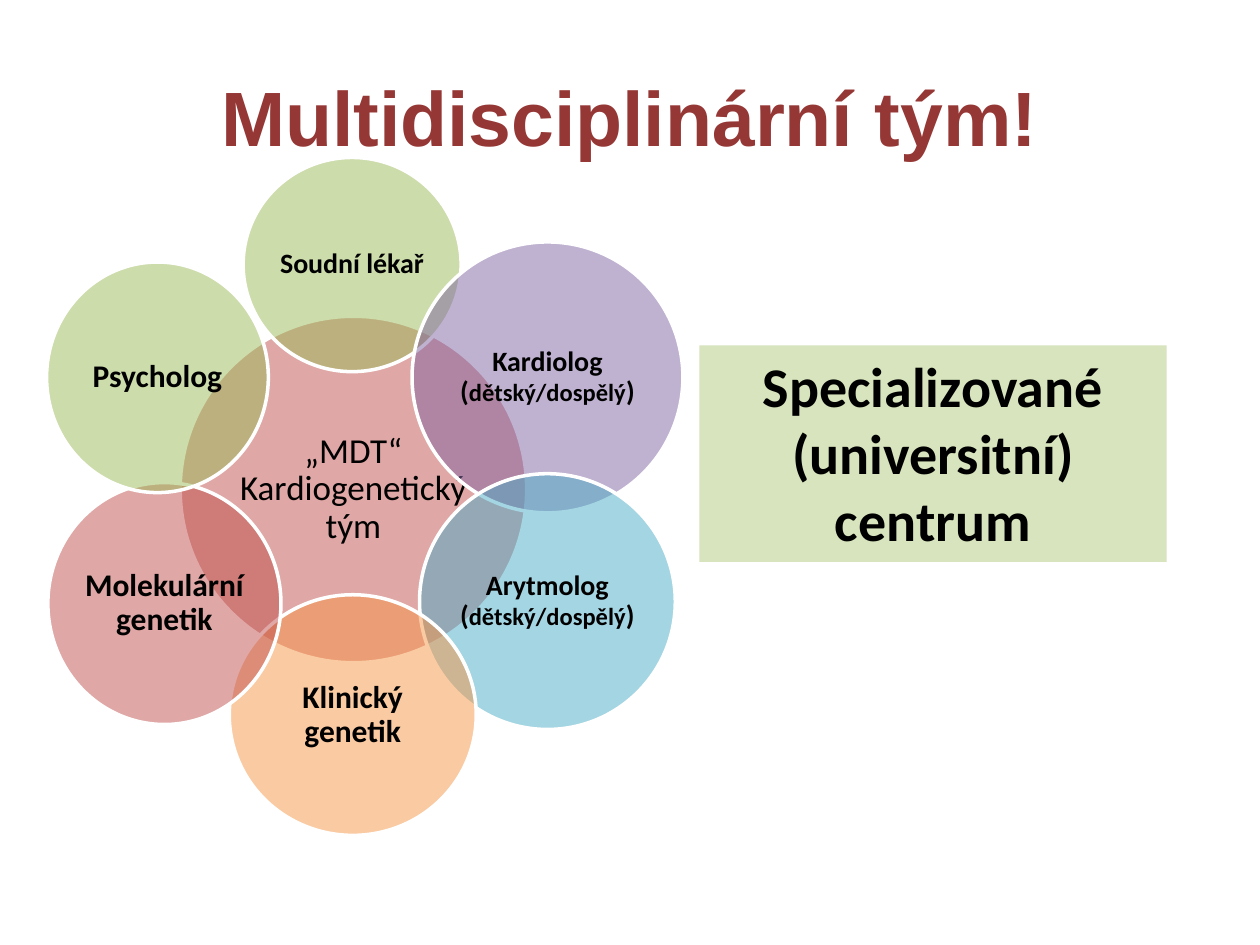
from lxml import etree
from pptx import Presentation
from pptx.dml.color import RGBColor
from pptx.enum.shapes import MSO_SHAPE
from pptx.enum.text import MSO_ANCHOR, PP_ALIGN
from pptx.oxml.ns import qn
from pptx.util import Inches, Pt

OVAL = MSO_SHAPE.OVAL
RECTANGLE = MSO_SHAPE.RECTANGLE
CENTER = PP_ALIGN.CENTER
MIDDLE = MSO_ANCHOR.MIDDLE
TOP = MSO_ANCHOR.TOP

TITLE_ONLY = 5
COLORS = {
    "title": "953735",
    "text": "000000",
    "outline": "FFFFFF",
    "box": "D7E4BD",
    "red": "C0504D",
    "green": "9BBB59",
    "purple": "8064A2",
    "blue": "4BACC6",
    "orange": "F79646",
}

SPECIALISTS = ("(", "dětský/dospělý", ")")
# left, top, width, height, color, font size, bold, text runs
CIRCLES = [
    (1.43, 2.51, 2.75, 2.75, "red", 20, False, ("„MDT“ Kardiogenetický tým",)),
    (1.93, 1.25, 1.73, 1.70, "green", 16, True, ("Soudní lékař",)),
    (3.27, 1.92, 2.15, 2.15, "purple", 16, True, ("Kardiolog ", *SPECIALISTS)),
    (3.33, 3.76, 2.03, 2.03, "blue", 16, True, ("Arytmolog ", *SPECIALISTS)),
    (1.82, 4.72, 1.96, 1.91, "orange", 18, True, ("Klinický genetik",)),
    (0.38, 3.83, 1.85, 1.92, "red", 18, True, ("Molekulární genetik",)),
    (0.37, 2.08, 1.76, 1.83, "green", 18, True, ("Psycholog",)),
]
SMALL_SIZES = {"dětský/dospělý": 14}


def rgb(name):
    return RGBColor.from_string(COLORS[name])


def format_run(run, size, bold=True, color="text", font_name="Calibri"):
    run.font.name = font_name
    run.font.size = Pt(size)
    run.font.bold = bold
    run.font.color.rgb = rgb(color)


def set_transparency(shape, opacity):
    """Give the solid fill an opacity in percent."""
    color = shape.fill._xPr.find(qn("a:solidFill"))[0]
    etree.SubElement(color, qn("a:alpha")).set("val", str(opacity * 1000))


def add_filled_shape(slide, kind, left, top, width, height, color):
    shape = slide.shapes.add_shape(
        kind, Inches(left), Inches(top), Inches(width), Inches(height))
    shape.shadow.inherit = False
    shape.fill.solid()
    shape.fill.fore_color.rgb = rgb(color)
    shape.text_frame.word_wrap = True
    shape.text_frame.paragraphs[0].alignment = CENTER
    return shape


def add_title(slide, text):
    title = slide.shapes.title
    title.left, title.top = Inches(0.5), Inches(0.5)
    title.width, title.height = Inches(9), Inches(0.84)
    frame = title.text_frame
    frame.text = text
    frame.vertical_anchor = MIDDLE
    frame.paragraphs[0].alignment = CENTER
    format_run(frame.paragraphs[0].runs[0], 44, color="title", font_name="Arial")


def add_circle(slide, left, top, width, height, color, size, bold, texts):
    circle = add_filled_shape(slide, OVAL, left, top, width, height, color)
    set_transparency(circle, 50)
    circle.line.color.rgb = rgb("outline")
    circle.line.width = Pt(2)
    frame = circle.text_frame
    frame.vertical_anchor = MIDDLE
    frame.margin_left = frame.margin_right = Inches(0.02)
    frame.margin_top = frame.margin_bottom = Inches(0.02)
    paragraph = frame.paragraphs[0]
    paragraph.line_spacing = 0.9
    for text in texts:
        run = paragraph.add_run()
        run.text = text
        format_run(run, SMALL_SIZES.get(text, size), bold)


def add_center_box(slide, text):
    box = add_filled_shape(slide, RECTANGLE, 5.55, 2.74, 3.71, 1.72, "box")
    box.line.fill.background()
    box.text_frame.vertical_anchor = TOP
    paragraph = box.text_frame.paragraphs[0]
    paragraph.text = text
    format_run(paragraph.runs[0], 32)


def main():
    presentation = Presentation()
    presentation.slide_width = Inches(10)
    presentation.slide_height = Inches(7.5)
    slide = presentation.slides.add_slide(presentation.slide_layouts[TITLE_ONLY])
    add_title(slide, "Multidisciplinární tým!")
    for circle in CIRCLES:
        add_circle(slide, *circle)
    add_center_box(slide, "Specializované (universitní) centrum")
    presentation.save("out.pptx")


if __name__ == "__main__":
    main()
